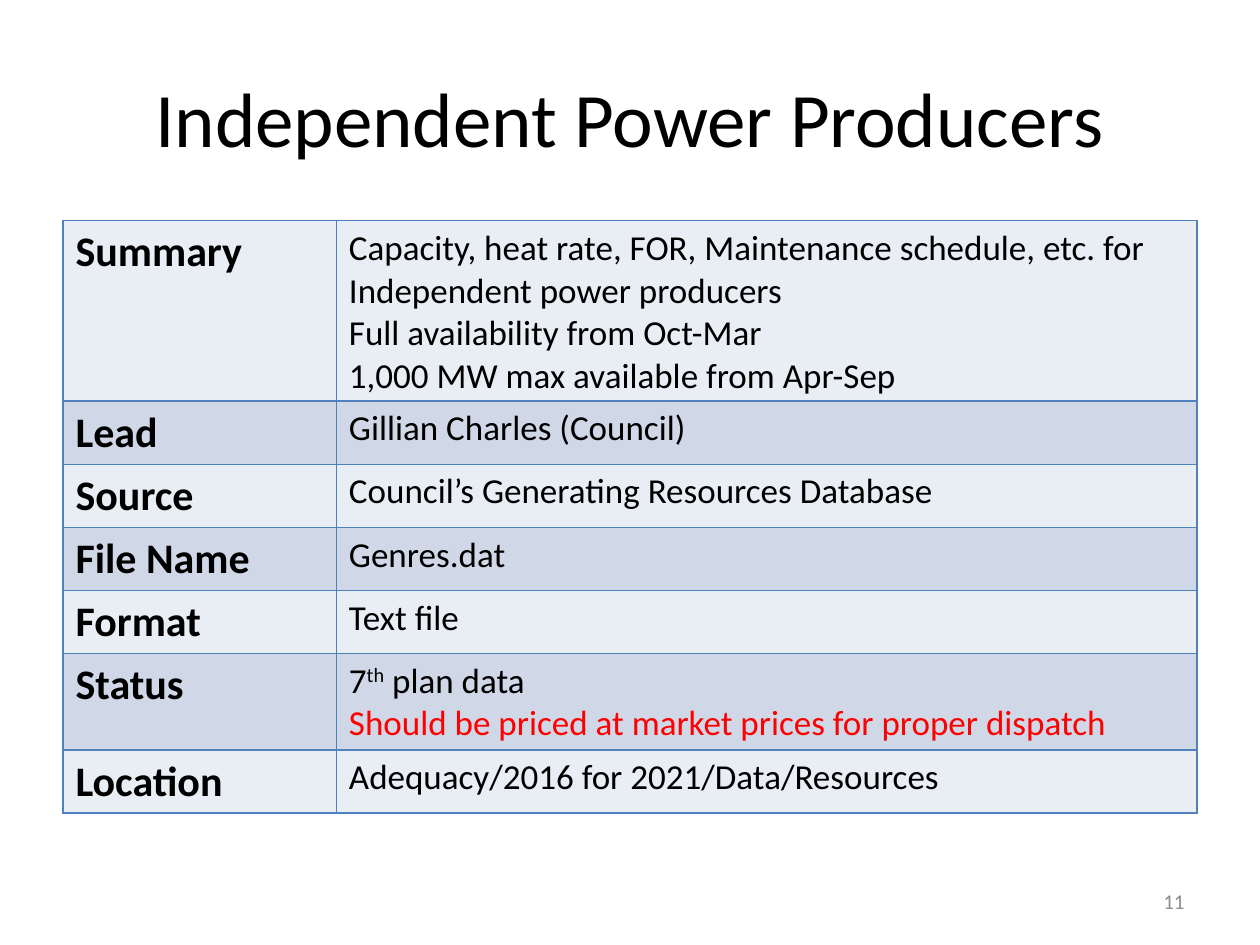
from pptx import Presentation
from pptx.dml.color import RGBColor
from pptx.enum.text import MSO_ANCHOR as Anchor, PP_ALIGN as Align
from pptx.oxml import parse_xml
from pptx.oxml.ns import nsdecls
from pptx.util import Inches, Pt

COLORS = {
    "text": "000000",
    "alert": "FF0000",
    "number": "8C8C8C",
    "border": "4F81BD",
    "light": "E9EDF4",
    "dark": "D0D8E8",
}

ROWS = [
    ("Summary", [
        ["Capacity, heat rate, FOR, Maintenance schedule, etc. for Independent power producers"],
        ["Full availability from Oct-Mar"],
        ["1,000 MW max available from Apr-Sep"],
    ]),
    ("Lead", [["Gillian Charles (Council)"]]),
    ("Source", [["Council’s Generating Resources Database"]]),
    ("File Name", [["Genres.dat"]]),
    ("Format", [["Text file"]]),
    ("Status", [
        ["7", ("th", {"baseline": 30}), " plan data"],
        [("Should be priced at market prices for proper dispatch", {"color": "alert"})],
    ]),
    ("Location", [["Adequacy/2016 for 2021/Data/Resources"]]),
]


class SlideBuilder:
    font = "Calibri"

    def __init__(self, slide):
        self.slide = slide

    def add_run(self, paragraph, text, size, color="text", bold=False, baseline=0):
        run = paragraph.add_run()
        run.text = text
        run.font.name = self.font
        run.font.size = Pt(size)
        run.font.bold = bold
        run.font.color.rgb = RGBColor.from_string(COLORS[color])
        if baseline:
            run.font._element.set("baseline", str(baseline * 1000))

    def text(self, left, top, width, height, text, size, align, color="text"):
        shape = self.slide.shapes.add_textbox(
            Inches(left), Inches(top), Inches(width), Inches(height))
        frame = shape.text_frame
        frame.word_wrap = True
        frame.vertical_anchor = Anchor.MIDDLE
        paragraph = frame.paragraphs[0]
        paragraph.alignment = align
        self.add_run(paragraph, text, size, color)

    def cell(self, cell, lines, size, fill, bold=False):
        for index, line in enumerate(lines):
            frame = cell.text_frame
            paragraph = frame.add_paragraph() if index else frame.paragraphs[0]
            for part in line:
                text, style = (part, {}) if isinstance(part, str) else part
                self.add_run(paragraph, text, size, bold=bold, **style)
        properties = cell._tc.get_or_add_tcPr()
        for side in ("lnL", "lnR", "lnT", "lnB"):
            properties.append(parse_xml(
                f'<a:{side} {nsdecls("a")} w="{Pt(1)}"><a:solidFill>'
                f'<a:srgbClr val="{COLORS["border"]}"/></a:solidFill></a:{side}>'))
        cell.fill.solid()
        cell.fill.fore_color.rgb = RGBColor.from_string(COLORS[fill])

    def table(self, left, top, widths, row_height, height, rows):
        shape = self.slide.shapes.add_table(
            len(rows), len(widths), Inches(left), Inches(top),
            Inches(sum(widths)), Inches(height))
        table = shape.table
        table.first_row = False
        table.horz_banding = False
        for column, width in zip(table.columns, widths):
            column.width = Inches(width)
        for index, (label, lines) in enumerate(rows):
            table.rows[index].height = Inches(row_height)
            fill = "dark" if index % 2 else "light"
            self.cell(table.cell(index, 0), [[label]], 24, fill, bold=True)
            self.cell(table.cell(index, 1), lines, 20, fill)
        shape.height = Inches(height)


def main():
    presentation = Presentation()
    presentation.slide_width = Inches(10)
    presentation.slide_height = Inches(7.5)
    slide = presentation.slides.add_slide(presentation.slide_layouts[6])
    builder = SlideBuilder(slide)
    builder.text(0.5, 0.3, 9, 1.25, "Independent Power Producers", 44, Align.CENTER)
    builder.table(0.5, 1.75, (2.17, 6.83), 0.41, 4.7, ROWS)
    builder.text(7.17, 6.95, 2.33, 0.4, "11", 12, Align.RIGHT, "number")
    presentation.save("out.pptx")


if __name__ == "__main__":
    main()
